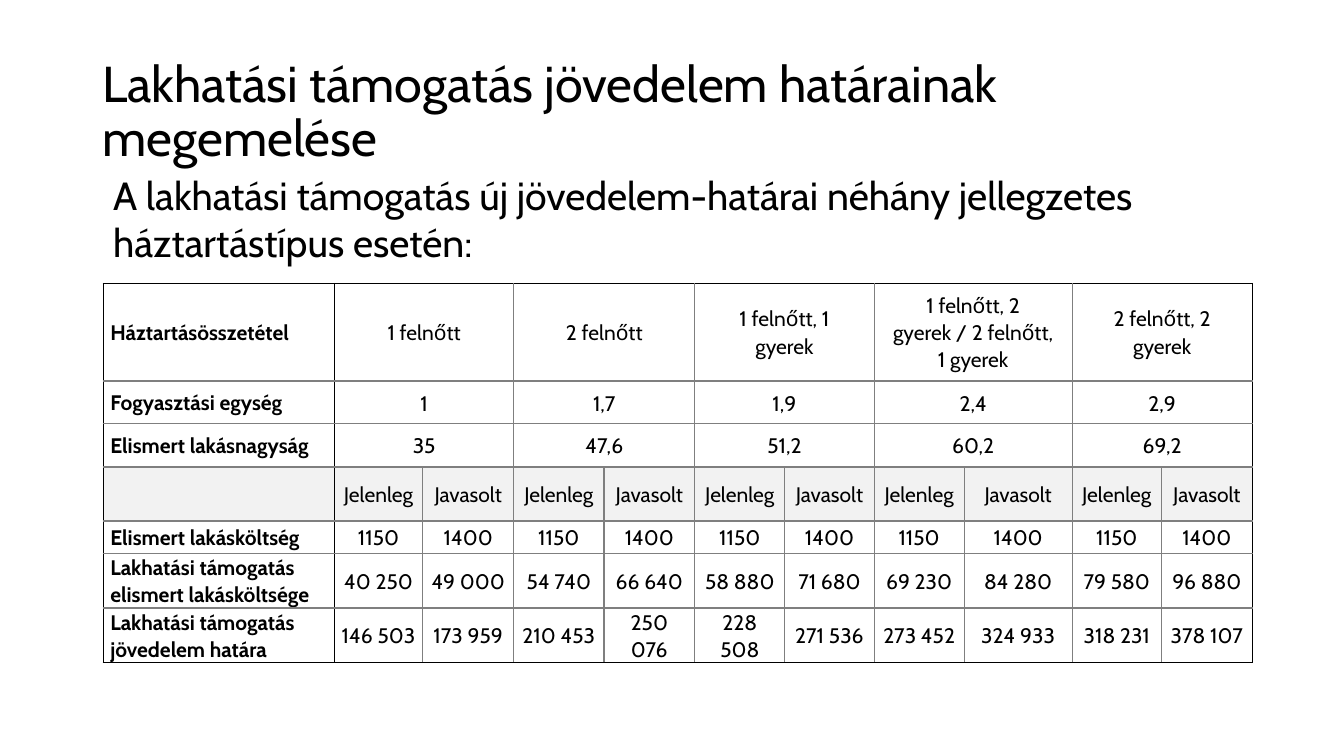
from lxml import etree
from pptx import Presentation
from pptx import util as u
from pptx.dml.color import RGBColor
from pptx.enum import text
from pptx.oxml.ns import qn

# Content
TITLE = "Lakhatási támogatás jövedelem határainak megemelése"
INTRO = ("A lakhatási támogatás új jövedelem-határai néhány jellegzetes "
         "háztartástípus esetén:")
HOUSEHOLD_ROWS = [
    ("Háztartásösszetétel", "1 felnőtt", "2 felnőtt", "1 felnőtt, 1 gyerek",
     "1 felnőtt, 2 gyerek / 2 felnőtt, 1 gyerek", "2 felnőtt, 2 gyerek"),
    ("Fogyasztási egység", "1", "1,7", "1,9", "2,4", "2,9"),
    ("Elismert lakásnagyság", "35", "47,6", "51,2", "60,2", "69,2"),
]
COMPARISON_ROWS = [
    ("",) + ("Jelenleg", "Javasolt") * 5,
    ("Elismert lakásköltség",) + ("1150", "1400") * 5,
    ("Lakhatási támogatás elismert lakásköltsége",
     "40 250", "49 000", "54 740", "66 640", "58 880",
     "71 680", "69 230", "84 280", "79 580", "96 880"),
    ("Lakhatási támogatás jövedelem határa",
     "146 503", "173 959", "210 453", "250 076", "228 508",
     "271 536", "273 452", "324 933", "318 231", "378 107"),
]

# Style and sizes in centimetres
FONT = "Cabin"
BLACK = RGBColor(0x00, 0x00, 0x00)
GREY = RGBColor(0x7F, 0x7F, 0x7F)
LIGHT = RGBColor(0xF2, 0xF2, 0xF2)
COL_WIDTHS = [5.83, 2.22, 2.3, 2.27, 2.29, 2.27, 2.25, 2.27, 2.72, 2.25, 2.29]
ROW_HEIGHTS = [2.46, 1.07, 1.09, 1.36, 0.81, 1.38, 1.37]
TIGHT, ROOMY = (0.18, 0), (0.38, 0.2)
SUBHEAD_ROW = len(HOUSEHOLD_ROWS)
LAST_ROW, LAST_COL = len(ROW_HEIGHTS) - 1, len(COL_WIDTHS) - 1


def add_run(p, words, size, bold=False):
    r = p.add_run()
    r.text = words
    r.font.name, r.font.size, r.font.bold = FONT, u.Pt(size), bold
    r.font.color.rgb = BLACK


def add_text(s, box, words, size, anchor, spacing):
    tf = s.shapes.add_textbox(*map(u.Cm, box)).text_frame
    tf.word_wrap = True
    tf.vertical_anchor = anchor
    p = tf.paragraphs[0]
    p.line_spacing = spacing
    add_run(p, words, size)


def set_borders(cell, colors):
    tc_pr = cell._tc.get_or_add_tcPr()
    for side, color in zip("LRTB", colors):
        ln = etree.SubElement(tc_pr, qn(f"a:ln{side}"), w=str(u.Pt(1)))
        fill = etree.SubElement(ln, qn("a:solidFill"))
        etree.SubElement(fill, qn("a:srgbClr"), val=str(color))


def style_cell(cell, row, first, last):
    # Outer frame and the label column are black, the inner grid is grey
    black_sides = (first <= 1, last in (0, LAST_COL), row == 0, row == LAST_ROW)
    set_borders(cell, [BLACK if b else GREY for b in black_sides])
    if row == SUBHEAD_ROW:
        cell.fill.solid()
        cell.fill.fore_color.rgb = LIGHT
    else:
        cell.fill.background()


def write_cell(cell, words, is_label, insets):
    side, end = map(u.Cm, insets)
    cell.margin_left = cell.margin_right = side
    cell.margin_top = cell.margin_bottom = end
    cell.vertical_anchor = text.MSO_ANCHOR.MIDDLE
    p = cell.text_frame.paragraphs[0]
    p.alignment = text.PP_ALIGN.LEFT if is_label else text.PP_ALIGN.CENTER
    p.line_spacing, p.space_after = 1.07, u.Pt(8)
    if words:
        add_run(p, words, 15, is_label)


def add_limits_table(s):
    frame = s.shapes.add_table(
        len(ROW_HEIGHTS), len(COL_WIDTHS), u.Cm(2.6), u.Cm(7.14),
        u.Cm(sum(COL_WIDTHS)), u.Cm(sum(ROW_HEIGHTS)))
    table = frame.table
    table.first_row = table.horz_banding = False
    for col, width in zip(table.columns, COL_WIDTHS):
        col.width = u.Cm(width)
    for row, height in zip(table.rows, ROW_HEIGHTS):
        row.height = u.Cm(height)

    for i, values in enumerate(HOUSEHOLD_ROWS + COMPARISON_ROWS):
        span = 2 if i < SUBHEAD_ROW else 1
        for j, words in enumerate(values):
            # The label takes one column, each value takes span columns
            first = 1 + (j - 1) * span if j else 0
            last = first + span - 1 if j else 0
            for c in range(first, last + 1):
                style_cell(table.cell(i, c), i, first, last)
            cell = table.cell(i, first)
            if last > first:
                cell.merge(table.cell(i, last))
            write_cell(cell, words, j == 0, ROOMY if last > first else TIGHT)


def main():
    prs = Presentation()
    prs.slide_width, prs.slide_height = u.Cm(33.87), u.Cm(19.05)
    s = prs.slides.add_slide(prs.slide_layouts[6])

    # Heading, table and introduction
    add_text(s, (2.33, 1.01, 29.21, 3.68), TITLE, 36, text.MSO_ANCHOR.MIDDLE, 0.9)
    add_limits_table(s)
    add_text(s, (2.6, 4.19, 28.93, 2.65), INTRO, 28, text.MSO_ANCHOR.TOP, 1.0)
    prs.save("out.pptx")


if __name__ == "__main__":
    main()
